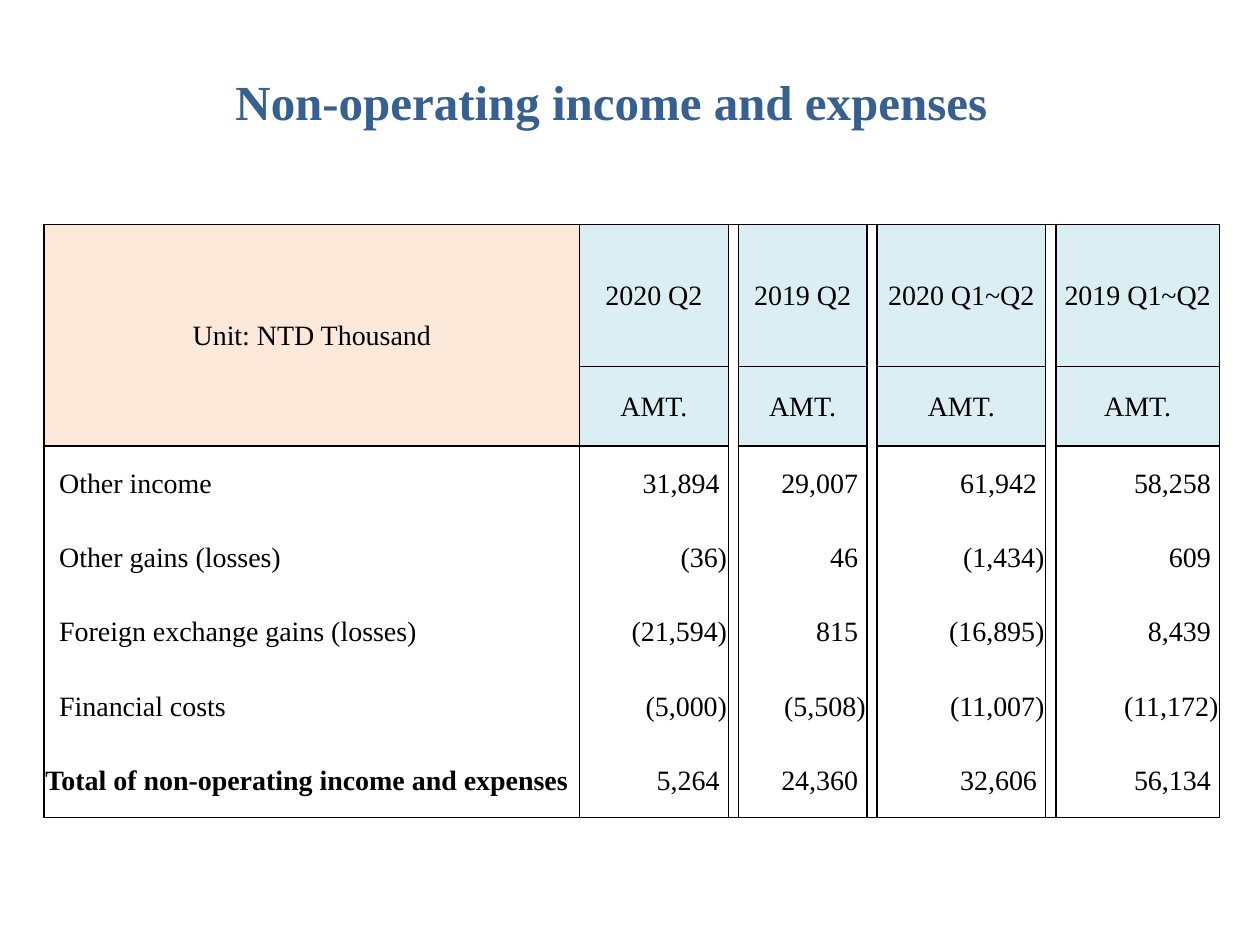
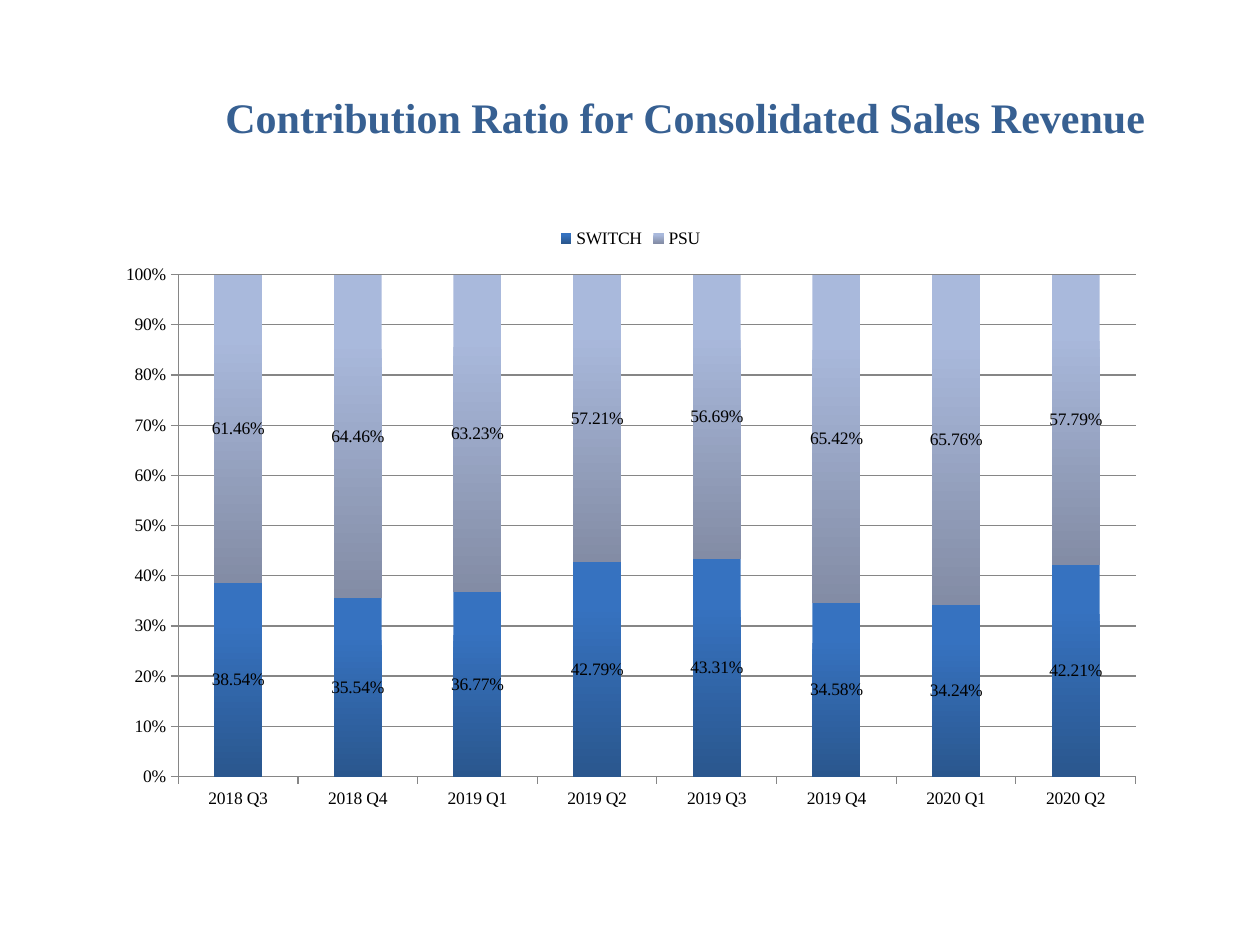
"""Build the non-operating income table and the sales contribution chart."""
import dataclasses

import lxml.etree
import pptx
import pptx.chart.data
import pptx.dml.color
import pptx.enum.chart
import pptx.enum.text
import pptx.oxml.ns
import pptx.util

Inches = pptx.util.Inches
Pt = pptx.util.Pt
qn = pptx.oxml.ns.qn
ALIGN = pptx.enum.text.PP_ALIGN


@dataclasses.dataclass(frozen=True)
class Theme:
    """Colours, font and type sizes shared by the slides."""
    font: str = "Times New Roman"
    title: str = "376092"
    ink: str = "000000"
    unit_fill: str = "FDE9D9"
    period_fill: str = "DBEEF3"
    grid: str = "868686"
    switch: tuple = ("3672C0", "2A578E")
    psu: tuple = ("A9B9DC", "838CA5")
    table_size: int = 16
    chart_size: int = 10
    border: float = 1


THEME = Theme()
PERIODS = ["2020 Q2", "2019 Q2", "2020 Q1~Q2", "2019 Q1~Q2"]
ITEMS = [
    ("Other income", "31,894", "29,007", "61,942", "58,258"),
    ("Other gains (losses)", "(36)", "46", "(1,434)", "609"),
    ("Foreign exchange gains (losses)", "(21,594)", "815", "(16,895)", "8,439"),
    ("Financial costs", "(5,000)", "(5,508)", "(11,007)", "(11,172)"),
    ("Total of non-operating income and expenses",
     "5,264", "24,360", "32,606", "56,134"),
]
HEADER_ROWS = 2
COLUMN_WIDTHS = [4.25, 1.18, 0.08, 1.02, 0.08, 1.34, 0.08, 1.3]
ROW_HEIGHTS = [1.13, 0.63] + [0.59] * len(ITEMS)
QUARTERS = ["2018 Q3", "2018 Q4", "2019 Q1", "2019 Q2",
            "2019 Q3", "2019 Q4", "2020 Q1", "2020 Q2"]
SWITCH_RATIOS = [0.3854, 0.3554, 0.3677, 0.4279, 0.4331, 0.3458, 0.3424, 0.4221]


def rgb(value):
    """Turn a hex string into a colour."""
    return pptx.dml.color.RGBColor.from_string(value)


def style_font(font, size, color=THEME.ink, bold=False):
    """Set the shared typeface with a size, colour and weight."""
    font.name, font.size, font.bold = THEME.font, Pt(size), bold
    font.color.rgb = rgb(color)


def write(tf, text, align=ALIGN.LEFT, **font_format):
    """Write one formatted paragraph into a text frame."""
    p = tf.paragraphs[0]
    p.alignment = align
    r = p.add_run()
    r.text = text
    style_font(r.font, **font_format)


def add_title(slide, text, left, top, width, height, size):
    """Add a slide title."""
    sp = slide.shapes.add_textbox(Inches(left), Inches(top),
                                  Inches(width), Inches(height))
    sp.text_frame.word_wrap = True
    write(sp.text_frame, text, size=size, color=THEME.title, bold=True)


def set_borders(cell, edges):
    """Draw the named edges of a cell and clear the others."""
    tc_pr = cell._tc.get_or_add_tcPr()
    for edge in "LRTB":
        ln = lxml.etree.SubElement(tc_pr, qn(f"a:ln{edge}"),
                                   w=str(Pt(THEME.border)))
        if edge in edges:
            fill = lxml.etree.SubElement(ln, qn("a:solidFill"))
            lxml.etree.SubElement(fill, qn("a:srgbClr"), val=THEME.ink)
        else:
            lxml.etree.SubElement(ln, qn("a:noFill"))


def format_cell(cell, edges, fill=None):
    """Give a cell its borders, fill, margins and anchor."""
    set_borders(cell, edges)
    if fill:
        cell.fill.solid()
        cell.fill.fore_color.rgb = rgb(fill)
    else:
        cell.fill.background()
    cell.margin_left = cell.margin_right = cell.margin_top = Inches(0.01)
    cell.margin_bottom = 0
    cell.vertical_anchor = pptx.enum.text.MSO_ANCHOR.MIDDLE


def cell_edges(row, is_gap):
    """Name the edges that a table cell shows."""
    in_header = row < HEADER_ROWS and not is_gap
    starts_block = row == 0 or (row == HEADER_ROWS and not is_gap)
    edges = "LR"
    if in_header or starts_block:
        edges += "T"
    if in_header or row == len(ROW_HEIGHTS) - 1:
        edges += "B"
    return edges


def add_income_table(slide):
    """Add the table of non-operating items by period."""
    table = slide.shapes.add_table(
        len(ROW_HEIGHTS), len(COLUMN_WIDTHS), Inches(0.35), Inches(1.78),
        Inches(sum(COLUMN_WIDTHS)), Inches(sum(ROW_HEIGHTS))).table
    table.first_row = table.horz_banding = False
    for column, width in zip(table.columns, COLUMN_WIDTHS):
        column.width = Inches(width)
    for row, height in zip(table.rows, ROW_HEIGHTS):
        row.height = Inches(height)
    for i in range(len(ROW_HEIGHTS)):
        for j in range(len(COLUMN_WIDTHS)):
            is_gap = j > 0 and j % 2 == 0
            fill = None
            if i < HEADER_ROWS and not is_gap:
                fill = THEME.period_fill if j else THEME.unit_fill
            format_cell(table.cell(i, j), cell_edges(i, is_gap), fill)

    size = THEME.table_size
    table.cell(0, 0).merge(table.cell(HEADER_ROWS - 1, 0))
    write(table.cell(0, 0).text_frame, "Unit: NTD Thousand", ALIGN.CENTER, size=size)
    for k, period in enumerate(PERIODS):
        for i, text in enumerate((period, "AMT.")):
            write(table.cell(i, 2 * k + 1).text_frame, text, ALIGN.CENTER, size=size)
    for i, (label, *amounts) in enumerate(ITEMS, HEADER_ROWS):
        cell = table.cell(i, 0)
        is_total = i == len(ROW_HEIGHTS) - 1
        if not is_total:
            cell.margin_left = Inches(0.12)
        write(cell.text_frame, label, size=size, bold=is_total)
        for k, amount in enumerate(amounts):
            cell = table.cell(i, 2 * k + 1)
            if not amount.endswith(")"):
                cell.margin_right = Inches(0.07)
            write(cell.text_frame, amount, ALIGN.RIGHT, size=size)


def style_series(series, colors):
    """Give a series a vertical gradient and percentage labels."""
    fill = series.format.fill
    fill.gradient()
    fill.gradient_angle = 270
    for stop, color, position in zip(fill.gradient_stops, colors, (0.2, 1)):
        stop.color.rgb = rgb(color)
        stop.position = position
    labels = series.data_labels
    labels.show_value = True
    labels.number_format, labels.number_format_is_linked = "0.00%", False
    labels.position = pptx.enum.chart.XL_LABEL_POSITION.CENTER
    style_font(labels.font, THEME.chart_size)


def place_plot(chart, **box):
    """Fix the inner plot area as fractions of the chart."""
    area = chart._chartSpace.chart.plotArea
    for old in area.findall(qn("c:layout")):
        area.remove(old)
    layout = lxml.etree.Element(qn("c:layout"))
    area.insert(0, layout)
    manual = lxml.etree.SubElement(layout, qn("c:manualLayout"))
    settings = {"layoutTarget": "inner", "xMode": "edge", "yMode": "edge", **box}
    for name, value in settings.items():
        lxml.etree.SubElement(manual, qn(f"c:{name}"), val=str(value))


def add_ratio_chart(slide):
    """Add the stacked columns of revenue share by quarter."""
    data = pptx.chart.data.CategoryChartData(number_format="0.00%")
    data.categories = QUARTERS
    data.add_series("SWITCH", SWITCH_RATIOS)
    data.add_series("PSU", [round(1 - ratio, 4) for ratio in SWITCH_RATIOS])
    chart = slide.shapes.add_chart(
        pptx.enum.chart.XL_CHART_TYPE.COLUMN_STACKED,
        Inches(0.83), Inches(1.7), Inches(8.35), Inches(4.8), data).chart
    style_font(chart.font, THEME.chart_size)
    chart.has_title = False
    chart.has_legend = True
    chart.legend.position = pptx.enum.chart.XL_LEGEND_POSITION.TOP
    chart.legend.include_in_layout = False
    place_plot(chart, x=0.07, y=0.1, w=0.91, h=0.83)

    plot = chart.plots[0]
    plot.gap_width, plot.overlap, plot.vary_by_categories = 150, 100, False
    for series, colors in zip(plot.series, (THEME.switch, THEME.psu)):
        style_series(series, colors)

    value_axis = chart.value_axis
    value_axis.minimum_scale, value_axis.maximum_scale = 0, 1
    value_axis.major_unit = 0.1
    value_axis.tick_labels.number_format = "0%"
    value_axis.tick_labels.number_format_is_linked = False
    value_axis.has_major_gridlines = True
    for axis in (value_axis, chart.category_axis):
        axis.major_tick_mark = pptx.enum.chart.XL_TICK_MARK.OUTSIDE
    for part in (value_axis, chart.category_axis, value_axis.major_gridlines):
        part.format.line.color.rgb = rgb(THEME.grid)
        part.format.line.width = Pt(0.75)


def main():
    """Build both slides and save the presentation."""
    prs = pptx.Presentation()
    prs.slide_width, prs.slide_height = Inches(10), Inches(7.5)
    blank = prs.slide_layouts[6]

    slide = prs.slides.add_slide(blank)
    add_title(slide, "Non-operating income and expenses",
              1.77, 0.52, 8.11, 0.96, size=28)
    add_income_table(slide)

    slide = prs.slides.add_slide(blank)
    add_title(slide, "Contribution Ratio for Consolidated Sales Revenue",
              1.69, 0.68, 7.56, 1.18, size=24)
    add_ratio_chart(slide)

    prs.save("out.pptx")


if __name__ == "__main__":
    main()
